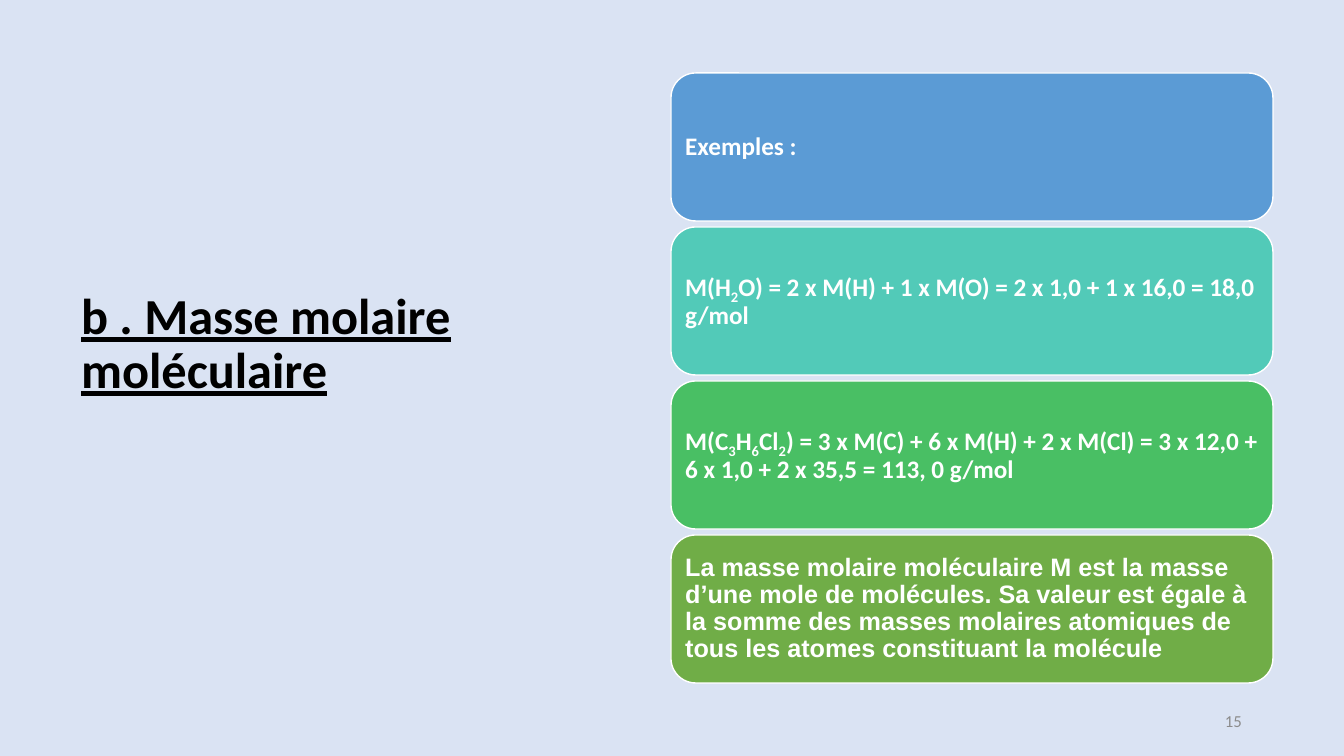
from dataclasses import dataclass

from pptx import Presentation
from pptx.dml.color import RGBColor
from pptx.enum.shapes import MSO_SHAPE as Shape
from pptx.enum.text import MSO_ANCHOR as Anchor, MSO_AUTO_SIZE as AutoSize, PP_ALIGN as Align
from pptx.slide import Slide
from pptx.text.text import Font, TextFrame
from pptx.util import Pt

EMU_PER_PX = 914400 / 100.8
CARD_LEFT, CARD_TOP, CARD_WIDTH, CARD_HEIGHT, CARD_PITCH = 671, 73, 602, 148, 154


@dataclass(frozen=True)
class Card:
    """A coloured card whose segments alternate between normal and subscript."""
    fill: str
    segments: tuple[str, ...]
    typeface: str = "Calibri"


CARDS = (
    Card("5B9BD5", ("Exemples :",)),
    Card("52CAB8", ("M(H", "2", "O) = 2 x M(H) + 1 x M(O) = 2 x 1,0 + 1 x 16,0 = 18,0 g/mol")),
    Card("49BF64", ("M(C", "3", "H", "6", "Cl", "2",
                    ") = 3 x M(C) + 6 x M(H) + 2 x M(Cl) = 3 x 12,0 + 6 x 1,0 + 2 x 35,5 = 113, 0 g/mol")),
    Card("70AD47", ("La masse molaire moléculaire M est la masse d’une mole de molécules. "
                    "Sa valeur est égale à la somme des masses molaires atomiques de tous "
                    "les atomes constituant la molécule",), "Arial"),
)


def px(length: int) -> int:
    """Turn pixels into EMU."""
    return round(length * EMU_PER_PX)


def colour(code: str) -> RGBColor:
    """Turn a hex string into a colour."""
    return RGBColor.from_string(code)


def set_font(font: Font, typeface: str, size: int, code: str, bold: bool = False) -> None:
    """Set typeface, size, colour and weight."""
    font.name, font.size, font.bold = typeface, Pt(size), bold
    font.color.rgb = colour(code)


def set_frame(frame: TextFrame) -> None:
    """Wrap the text and centre it vertically at a fixed size."""
    frame.word_wrap = True
    frame.auto_size = AutoSize.NONE
    frame.vertical_anchor = Anchor.MIDDLE


def add_title(slide: Slide) -> None:
    """Place and format the heading."""
    heading = slide.shapes.title
    heading.left, heading.top, heading.width, heading.height = px(71), px(71), px(529), px(614)
    frame = heading.text_frame
    frame.text = "b . Masse molaire moléculaire"
    set_frame(frame)
    frame.margin_bottom = px(71)
    paragraph = frame.paragraphs[0]
    paragraph.alignment, paragraph.line_spacing = Align.LEFT, 0.9
    set_font(paragraph.font, "Calibri", 36, "000000", bold=True)
    paragraph.font.underline = True


def add_card(slide: Slide, card: Card, row: int) -> None:
    """Draw one card in its row of the stack."""
    box = slide.shapes.add_shape(Shape.ROUNDED_RECTANGLE, px(CARD_LEFT), px(CARD_TOP + row * CARD_PITCH),
                                 px(CARD_WIDTH), px(CARD_HEIGHT))
    box.shadow.inherit = False
    box.fill.solid()
    box.fill.fore_color.rgb = colour(card.fill)
    box.line.color.rgb = colour("FFFFFF")
    box.line.width = Pt(1)
    frame = box.text_frame
    set_frame(frame)
    frame.margin_left = frame.margin_right = frame.margin_top = frame.margin_bottom = px(7)
    paragraph = frame.paragraphs[0]
    paragraph.alignment, paragraph.line_spacing = Align.LEFT, 0.9
    set_font(paragraph.font, card.typeface, 18, "FFFFFF", bold=True)
    for index, segment in enumerate(card.segments):
        run = paragraph.add_run()
        run.text = segment
        if index % 2:
            run._r.get_or_add_rPr().set("baseline", "-25000")


def add_page_number(slide: Slide) -> None:
    """Write the page number at the lower right."""
    page_number = slide.shapes.add_textbox(px(950), px(701), px(302), px(40))
    frame = page_number.text_frame
    frame.text = "15"
    set_frame(frame)
    paragraph = frame.paragraphs[0]
    paragraph.alignment = Align.RIGHT
    set_font(paragraph.font, "Calibri", 12, "8C8C8C")


def main() -> None:
    """Build and save the slide."""
    deck = Presentation()
    deck.slide_width, deck.slide_height = px(1344), px(756)
    slide = deck.slides.add_slide(deck.slide_layouts.get_by_name("Title Only"))
    slide.background.fill.solid()
    slide.background.fill.fore_color.rgb = colour("DAE3F3")
    add_title(slide)
    for row, card in enumerate(CARDS):
        add_card(slide, card, row)
    add_page_number(slide)
    deck.save("out.pptx")


if __name__ == "__main__":
    main()
